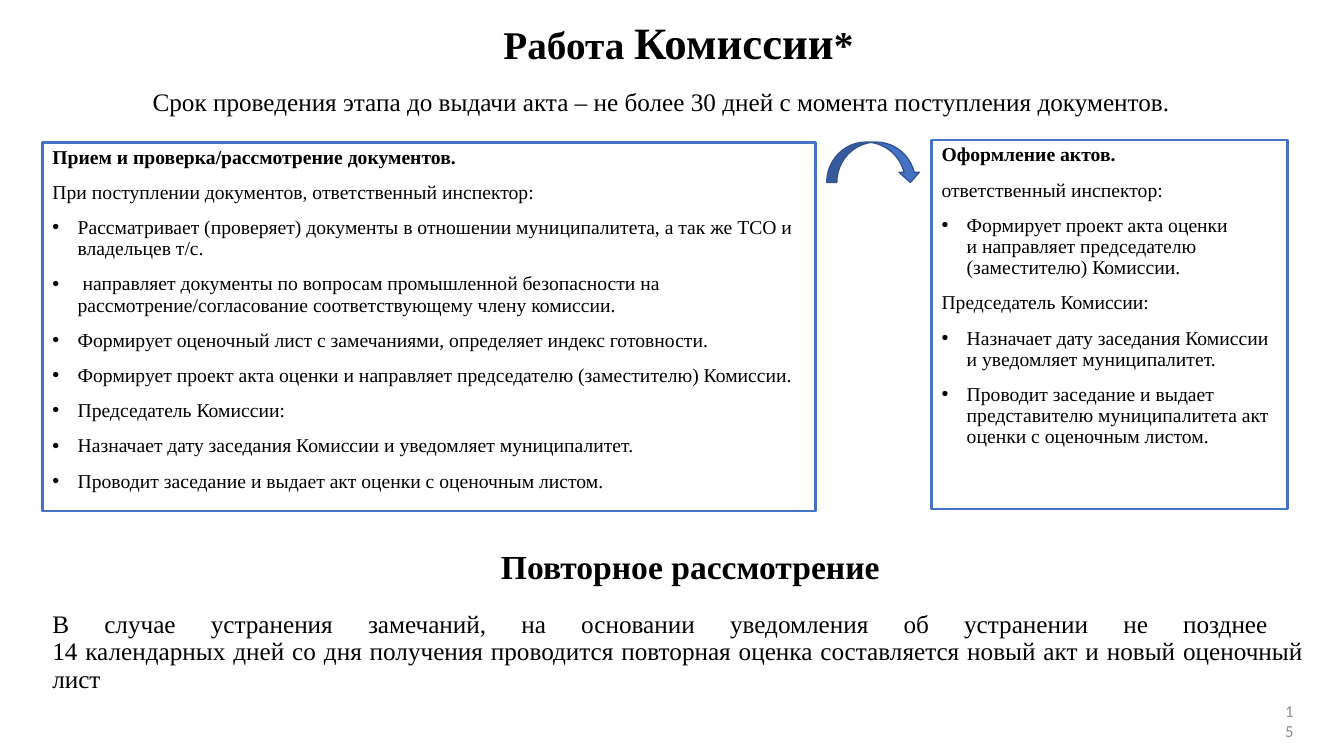
from copy import deepcopy
from dataclasses import dataclass
from typing import NamedTuple

from lxml import etree
from pptx import Presentation
from pptx import util as u
from pptx.dml.color import RGBColor
from pptx.enum import shapes, text
from pptx.oxml import ns

PX = u.Inches(1) // 100


@dataclass(frozen=True)
class Theme:
    serif: str = "Times New Roman"
    sans: str = "Calibri"
    ink: str = "000000"
    muted: str = "8C8C8C"
    accent: str = "4472C4"
    accent_dark: str = "325491"
    title: int = 28
    title_large: int = 32
    heading: int = 24
    lead: int = 18
    body: int = 14
    number: int = 12


T = Theme()


class Box(NamedTuple):
    left: int
    top: int
    width: int
    height: int

    def emu(self) -> list[int]:
        return [v * PX for v in self]


@dataclass(frozen=True)
class Para:
    text: str
    size: int = T.body
    bold: bool = False
    bullet: bool = False
    align: text.PP_ALIGN = text.PP_ALIGN.LEFT
    spacing: float = 0.9
    before: int = 10
    font: str = T.serif
    color: str = T.ink


def style_run(r, item: Para, size: int) -> None:
    r.font.name = item.font
    r.font.size = u.Pt(size)
    r.font.bold = item.bold
    r.font.color.rgb = RGBColor.from_string(item.color)


def set_bullet(p, bullet: bool) -> None:
    pPr = p._p.get_or_add_pPr()
    indent = 25 * PX if bullet else 0
    pPr.set("marL", str(indent))
    pPr.set("indent", str(-indent))
    if bullet:
        etree.SubElement(pPr, ns.qn("a:buFont")).set("typeface", "Arial")
        etree.SubElement(pPr, ns.qn("a:buChar")).set("char", "•")
    else:
        etree.SubElement(pPr, ns.qn("a:buNone"))


def format_paragraph(p, item: Para) -> None:
    p.alignment = item.align
    p.line_spacing = item.spacing
    p.space_before = u.Pt(item.before)
    set_bullet(p, item.bullet)
    for r in p.runs:
        style_run(r, item, item.size)
    for br in p._p.findall(ns.qn("a:br")):
        br.append(deepcopy(p.runs[0]._r.rPr))


def fill_text(sp, items: list[Para], anchor=text.MSO_ANCHOR.TOP) -> None:
    tf = sp.text_frame
    tf.word_wrap = True
    tf.auto_size = text.MSO_AUTO_SIZE.NONE
    tf.vertical_anchor = anchor
    for i, item in enumerate(items):
        p = tf.add_paragraph() if i else tf.paragraphs[0]
        p.text = item.text
        format_paragraph(p, item)


def place(sp, box: Box) -> None:
    sp.left, sp.top, sp.width, sp.height = box.emu()


def outline(sp, color: str, width: int) -> None:
    sp.line.color.rgb = RGBColor.from_string(color)
    sp.line.width = u.Pt(width)


def add_text(s, box: Box, item: Para, anchor=text.MSO_ANCHOR.TOP) -> None:
    fill_text(s.shapes.add_textbox(*box.emu()), [item], anchor)


def add_title(s, box: Box) -> None:
    sp = s.shapes.title
    place(sp, box)
    item = Para("", bold=True, align=text.PP_ALIGN.CENTER, before=0)
    fill_text(sp, [item], text.MSO_ANCHOR.MIDDLE)
    p = sp.text_frame.paragraphs[0]
    parts = [("Работа ", T.title), ("Комиссии", T.title_large), ("*", T.title)]
    for words, size in parts:
        r = p.add_run()
        r.text = words
        style_run(r, item, size)


def add_arrow(s, box: Box) -> None:
    sp = s.shapes.add_shape(shapes.MSO_SHAPE.CURVED_DOWN_ARROW, *box.emu())
    sp.shadow.inherit = False
    sp.fill.solid()
    sp.fill.fore_color.rgb = RGBColor.from_string(T.accent)
    outline(sp, T.accent_dark, 1)


REVIEW = [
    Para("Прием и проверка/рассмотрение документов.", bold=True),
    Para("При поступлении документов, ответственный инспектор:"),
    *(Para(t, bullet=True) for t in (
        "Рассматривает (проверяет) документы в отношении муниципалитета, а так же ТСО и владельцев т/с.",
        " направляет документы по вопросам промышленной безопасности на рассмотрение/согласование "
        "соответствующему члену комиссии.",
        "Формирует оценочный лист с замечаниями, определяет индекс готовности.",
        "Формирует проект акта оценки и направляет председателю (заместителю) Комиссии.",
        "Председатель Комиссии:",
        "Назначает дату заседания Комиссии и уведомляет муниципалитет.",
        "Проводит заседание и выдает акт оценки с оценочным листом.",
    )),
]
ACTS = [
    Para("Оформление актов.", bold=True),
    Para("ответственный инспектор:"),
    Para("Формирует проект акта оценки \nи направляет председателю (заместителю) Комиссии.", bullet=True),
    Para("Председатель Комиссии:"),
    Para("Назначает дату заседания Комиссии\nи уведомляет муниципалитет.", bullet=True),
    Para("Проводит заседание и выдает представителю муниципалитета акт оценки с оценочным листом.", bullet=True),
]


def main() -> None:
    prs = Presentation()
    prs.slide_width, prs.slide_height = 1333 * PX, 750 * PX
    s = prs.slides.add_slide(prs.slide_layouts[1])

    add_title(s, Box(98, 14, 1150, 62))

    review = s.placeholders[1]
    place(review, Box(42, 141, 767, 366))
    acts = s.shapes.add_textbox(*Box(924, 139, 353, 366).emu())
    for sp, items in ((review, REVIEW), (acts, ACTS)):
        fill_text(sp, items)
        outline(sp, T.accent, 2)

    add_text(s, Box(42, 602, 1261, 92), Para(
        "В случае устранения замечаний, на основании уведомления об устранении не позднее \n"
        "14 календарных дней со дня получения проводится повторная оценка составляется новый акт "
        "и новый оценочный лист", T.lead, align=text.PP_ALIGN.JUSTIFY))
    add_text(s, Box(487, 537, 413, 50),
             Para("Повторное рассмотрение", T.heading, bold=True, spacing=1.0, before=0))
    add_text(s, Box(64, 81, 1184, 40), Para(
        "Срок проведения этапа до выдачи акта – не более 30 дней с момента поступления документов.",
        T.lead, align=text.PP_ALIGN.CENTER, spacing=1.0, before=0))
    add_arrow(s, Box(820, 141, 93, 40))
    add_text(s, Box(1260, 695, 33, 40), Para(
        "15", T.number, align=text.PP_ALIGN.RIGHT, spacing=1.0, before=0,
        font=T.sans, color=T.muted), text.MSO_ANCHOR.MIDDLE)

    prs.save("out.pptx")


if __name__ == "__main__":
    main()
